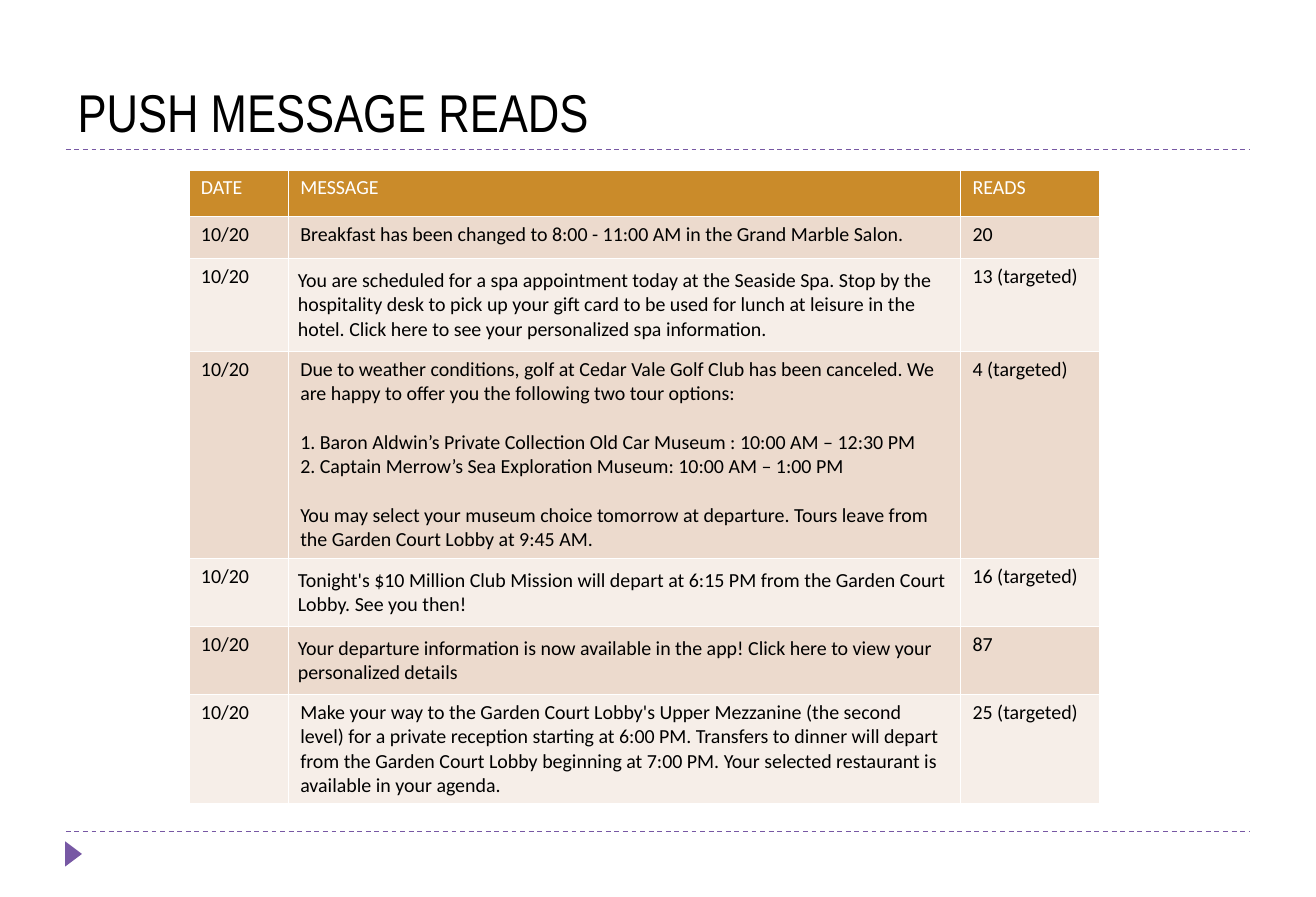
from dataclasses import dataclass

from lxml import etree
from pptx import Presentation
from pptx.dml.color import RGBColor
from pptx.enum.dml import MSO_LINE
from pptx.enum.shapes import MSO_CONNECTOR, MSO_SHAPE
from pptx.enum.text import MSO_ANCHOR
from pptx.oxml.ns import qn
from pptx.util import Inches, Pt

DASH = MSO_LINE.DASH
STRAIGHT = MSO_CONNECTOR.STRAIGHT
TRIANGLE = MSO_SHAPE.ISOSCELES_TRIANGLE
MIDDLE, BOTTOM = MSO_ANCHOR.MIDDLE, MSO_ANCHOR.BOTTOM


@dataclass(frozen=True)
class Theme:
    accent: str = "7758A4"
    header: str = "CA8B2A"
    bands: tuple = ("ECDACD", "F6EEE8")
    ink: str = "000000"
    paper: str = "FFFFFF"
    title_font: str = "Arial Narrow"
    body_font: str = "Calibri"
    title_size: int = 32
    body_size: int = 12
    line_gap: float = 14.65


THEME = Theme()
WIDTH, HEIGHT = 11, 7.5
MARGIN = WIDTH * 0.05
TITLE_RULE, FOOTER_RULE = 1.25, 6.95

TABLE_LEFT, TABLE_TOP = 1.58, 1.42
COLUMNS = (0.83, 5.62, 1.16)
ROWS = (0.39, 0.35, 0.78, 1.73, 0.57, 0.57, 0.91)
HEADINGS = ("DATE", "MESSAGE", "READS")
DATE = "10/20"
INSET_ROWS = (2, 4, 5)  # messages centred vertically with even insets
GAP_PARAGRAPHS = {3: (1, 3)}  # row: paragraphs that follow a line's gap

MESSAGES = (
    ("Breakfast has been changed to 8:00 - 11:00 AM in the Grand Marble Salon.", "20"),
    ("You are scheduled for a spa appointment today at the Seaside Spa. Stop by the "
     "hospitality desk to pick up your gift card to be used for lunch at leisure in the "
     "hotel. Click here to see your personalized spa information.", "13 (targeted)"),
    ("Due to weather conditions, golf at Cedar Vale Golf Club has been canceled. "
     "We are happy to offer you the following two tour options:\n"
     "1. Baron Aldwin’s Private Collection Old Car Museum : 10:00 AM – 12:30 PM\n"
     "2. Captain Merrow’s Sea Exploration Museum: 10:00 AM – 1:00 PM\n"
     "You may select your museum choice tomorrow at departure. Tours leave from "
     "the Garden Court Lobby at 9:45 AM.", "4 (targeted)"),
    ("Tonight's $10 Million Club Mission will depart at 6:15 PM from the Garden "
     "Court Lobby. See you then!", "16 (targeted)"),
    ("Your departure information is now available in the app! Click here to view your "
     "personalized details", "87"),
    ("Make your way to the Garden Court Lobby's Upper Mezzanine (the second "
     "level) for a private reception starting at 6:00 PM. Transfers to dinner will depart "
     "from the Garden Court Lobby beginning at 7:00 PM. Your selected restaurant is "
     "available in your agenda.", "25 (targeted)"),
)


def rgb(color):
    return RGBColor.from_string(color)


def format_text(tf, font, size, color):
    for p in tf.paragraphs:
        for r in p.runs:
            r.font.name = font
            r.font.size = Pt(size)
            r.font.bold = False
            r.font.color.rgb = rgb(color)


def add_rule(slide, y):
    line = slide.shapes.add_connector(
        STRAIGHT, Inches(MARGIN), Inches(y), Inches(WIDTH - MARGIN), Inches(y))
    line.line.color.rgb = rgb(THEME.accent)
    line.line.width = Pt(0.75)
    line.line.dash_style = DASH
    etree.SubElement(line._element.spPr, qn("a:effectLst"))


def add_marker(slide):
    sp = slide.shapes.add_shape(
        TRIANGLE, Inches(0.51), Inches(7.07), Inches(0.21), Inches(0.14))
    sp.rotation = 90
    sp.shadow.inherit = False
    sp.fill.solid()
    sp.fill.fore_color.rgb = rgb(THEME.accent)
    sp.line.fill.background()


def add_title(slide, text):
    top = 0.17
    box = slide.shapes.add_textbox(
        Inches(MARGIN), Inches(top), Inches(WIDTH - 2 * MARGIN), Inches(TITLE_RULE - top))
    tf = box.text_frame
    tf.word_wrap = True
    tf.vertical_anchor = BOTTOM
    tf.text = text
    format_text(tf, THEME.title_font, THEME.title_size, THEME.ink)


def set_borders(cell):
    tcPr = cell._tc.get_or_add_tcPr()
    for side in "LRTB":
        ln = etree.SubElement(tcPr, qn(f"a:ln{side}"), w=str(Pt(1)))
        fill = etree.SubElement(ln, qn("a:solidFill"))
        etree.SubElement(fill, qn("a:srgbClr"), val=THEME.paper)


def fill_cell(cell, text, fill, color):
    set_borders(cell)
    cell.fill.solid()
    cell.fill.fore_color.rgb = rgb(fill)
    cell.text_frame.text = text
    format_text(cell.text_frame, THEME.body_font, THEME.body_size, color)


def add_message_table(slide):
    frame = slide.shapes.add_table(
        len(ROWS), len(COLUMNS), Inches(TABLE_LEFT), Inches(TABLE_TOP),
        Inches(sum(COLUMNS)), Inches(sum(ROWS)))
    table = frame.table
    table.first_row = table.horz_banding = False
    for column, width in zip(table.columns, COLUMNS):
        column.width = Inches(width)
    for row, height in zip(table.rows, ROWS):
        row.height = Inches(height)

    # Header, then banded message rows
    for c, heading in enumerate(HEADINGS):
        fill_cell(table.cell(0, c), heading, THEME.header, THEME.paper)
    for i, (message, reads) in enumerate(MESSAGES, start=1):
        for c, text in enumerate((DATE, message, reads)):
            fill_cell(table.cell(i, c), text, THEME.bands[(i - 1) % 2], THEME.ink)

    # Special message layouts
    for i in INSET_ROWS:
        cell = table.cell(i, 1)
        cell.vertical_anchor = MIDDLE
        cell.margin_left = cell.margin_right = Inches(0.08)
        cell.margin_top = cell.margin_bottom = Inches(0.08)
    for i, positions in GAP_PARAGRAPHS.items():
        for n in positions:
            table.cell(i, 1).text_frame.paragraphs[n].space_before = Pt(THEME.line_gap)


def main():
    prs = Presentation()
    prs.slide_width, prs.slide_height = Inches(WIDTH), Inches(HEIGHT)
    slide = prs.slides.add_slide(prs.slide_layouts[6])

    # Frame of the page
    for y in (FOOTER_RULE, TITLE_RULE):
        add_rule(slide, y)
    add_marker(slide)

    # Content
    add_title(slide, "PUSH MESSAGE READS")
    add_message_table(slide)
    prs.save("out.pptx")


if __name__ == "__main__":
    main()
